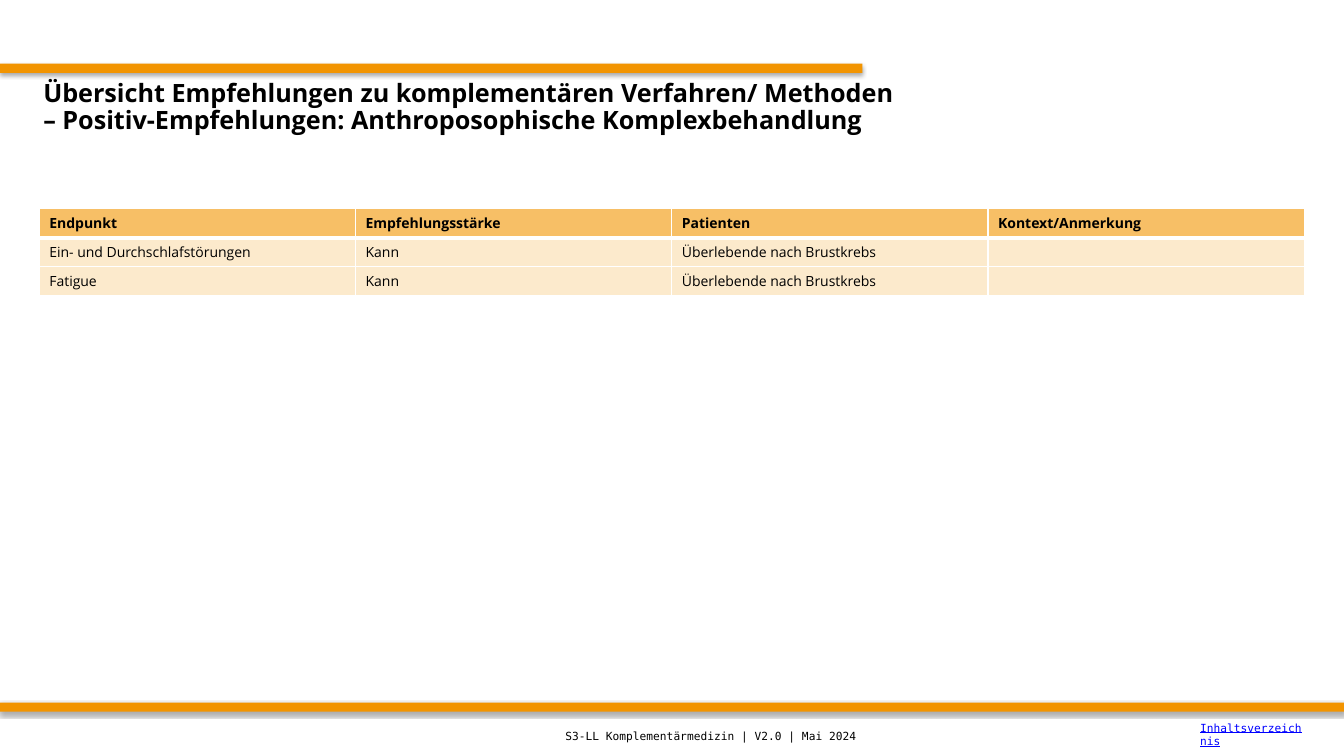
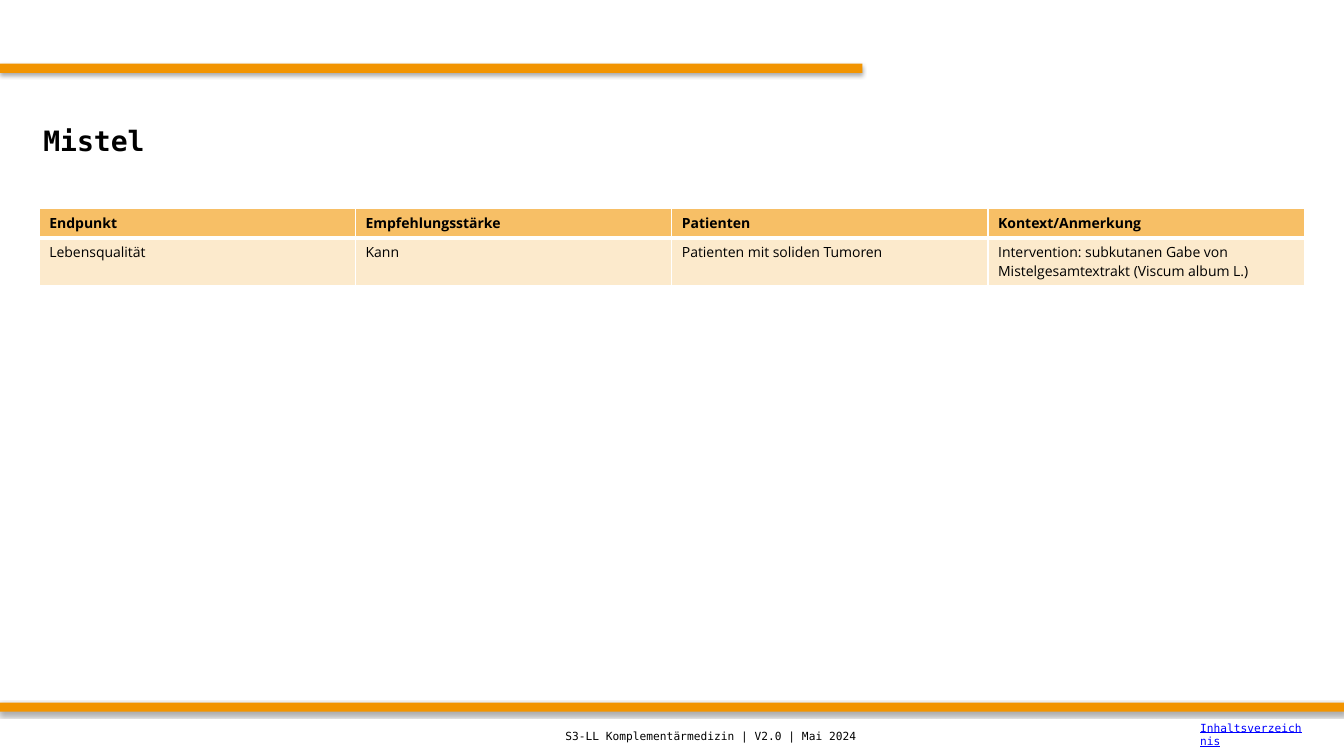
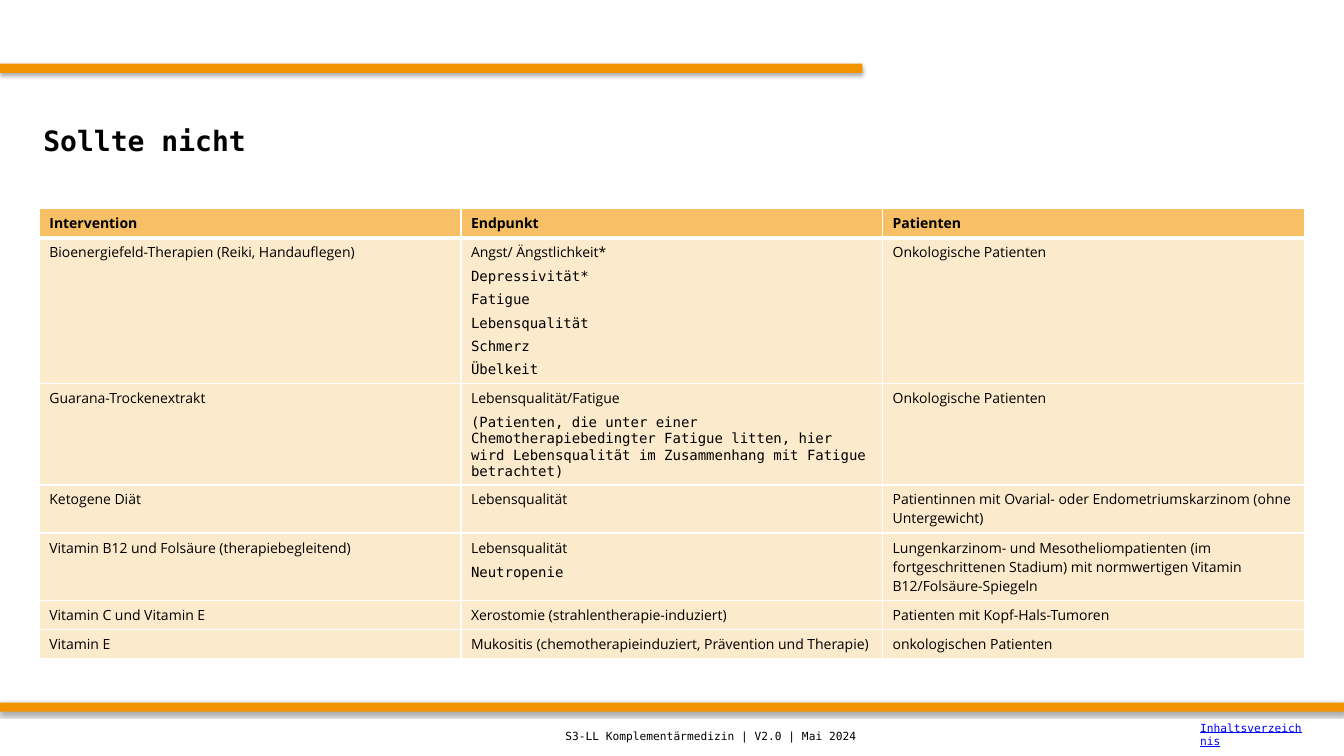
from lxml import etree
from pptx import Presentation
from pptx.dml.color import RGBColor
from pptx.enum.shapes import MSO_SHAPE
from pptx.enum.text import MSO_ANCHOR
from pptx.oxml.ns import qn
from pptx.util import Pt

RECTANGLE = MSO_SHAPE.RECTANGLE
TOP = MSO_ANCHOR.TOP
MIDDLE = MSO_ANCHOR.MIDDLE

BLANK_LAYOUT = 6
SLIDE_WIDTH, SLIDE_HEIGHT = 960, 540
SANS, MONO = "Open Sans", "DejaVu Sans Mono"
BLACK, WHITE, LINK_BLUE = "000000", "FFFFFF", "0000FF"
ORANGE, HEADER_FILL, BODY_FILL = "F29400", "F7BF66", "FCEACC"

TABLE_LEFT, TABLE_TOP, TABLE_WIDTH = 28.1, 149, 903.6
LINE_HEIGHT = 20.8
THIN, THICK = 1, 3

TREATMENT_HEADER = ["Endpunkt", "Empfehlungsstärke", "Patienten", "Kontext/Anmerkung"]
ANTHROPOSOPHIC_ROWS = [
    (LINE_HEIGHT, ["Ein- und Durchschlafstörungen", "Kann", "Überlebende nach Brustkrebs", ""]),
    (LINE_HEIGHT, ["Fatigue", "Kann", "Überlebende nach Brustkrebs", ""]),
]
MISTLETOE_ROWS = [
    (34.4, ["Lebensqualität", "Kann", "Patienten mit soliden Tumoren",
            "Intervention: subkutanen Gabe von Mistelgesamtextrakt (Viscum album L.)"]),
]
NEGATIVE_HEADER = ["Intervention", "Endpunkt", "Patienten"]
NEGATIVE_ROWS = [
    (104.2, ["Bioenergiefeld-Therapien (Reiki, Handauflegen)",
             "Angst/ Ängstlichkeit*\nDepressivität*\nFatigue\nLebensqualität\nSchmerz\nÜbelkeit",
             "Onkologische Patienten"]),
    (72.2, ["Guarana-Trockenextrakt",
            "Lebensqualität/Fatigue\n(Patienten, die unter einer Chemotherapiebedingter Fatigue "
            "litten, hier wird Lebensqualität im Zusammenhang mit Fatigue betrachtet)",
            "Onkologische Patienten"]),
    (34.4, ["Ketogene Diät", "Lebensqualität",
            "Patientinnen mit Ovarial- oder Endometriumskarzinom (ohne Untergewicht)"]),
    (48, ["Vitamin B12 und Folsäure (therapiebegleitend)", "Lebensqualität\nNeutropenie",
          "Lungenkarzinom- und Mesotheliompatienten (im fortgeschrittenen Stadium) "
          "mit normwertigen Vitamin B12/Folsäure-Spiegeln"]),
    (LINE_HEIGHT, ["Vitamin C und Vitamin E", "Xerostomie (strahlentherapie-induziert)",
                   "Patienten mit Kopf-Hals-Tumoren"]),
    (LINE_HEIGHT, ["Vitamin E", "Mukositis (chemotherapieinduziert, Prävention und Therapie)",
                   "onkologischen Patienten"]),
]


def color(hex_string):
    return RGBColor.from_string(hex_string)


def format_runs(paragraph, font_name, size, hex_color=BLACK, bold=False, underline=False):
    for run in paragraph.runs:
        run.font.name = font_name
        run.font.size = Pt(size)
        run.font.bold = bold
        run.font.underline = underline
        run.font.color.rgb = color(hex_color)


def add_text(slide, box, text, font_name, size, anchor=MIDDLE, line_spacing=1.0, **style):
    shape = slide.shapes.add_textbox(*map(Pt, box))
    text_frame = shape.text_frame
    text_frame.word_wrap = True
    text_frame.vertical_anchor = anchor
    text_frame.text = text
    for paragraph in text_frame.paragraphs:
        paragraph.line_spacing = line_spacing
        format_runs(paragraph, font_name, size, **style)


def add_band(slide, top, width):
    """Orange bar from the left edge with a soft shadow below."""
    band = slide.shapes.add_shape(RECTANGLE, 0, Pt(top), Pt(width), Pt(6.6))
    band.fill.solid()
    band.fill.fore_color.rgb = color(ORANGE)
    band.line.fill.background()
    band.shadow.inherit = False
    effects = band._element.spPr.find(qn("a:effectLst"))
    shadow = etree.SubElement(effects, qn("a:outerShdw"), blurRad=str(Pt(3.1)),
                              dist=str(Pt(1.8)), dir="5400000", rotWithShape="0")
    shadow_color = etree.SubElement(shadow, qn("a:srgbClr"), val=BLACK)
    etree.SubElement(shadow_color, qn("a:alpha"), val="35000")


def set_borders(cell, top, bottom):
    properties = cell._tc.get_or_add_tcPr()
    for side, width in (("L", THIN), ("R", THIN), ("T", top), ("B", bottom)):
        line = etree.SubElement(properties, qn(f"a:ln{side}"), w=str(Pt(width)))
        fill = etree.SubElement(line, qn("a:solidFill"))
        etree.SubElement(fill, qn("a:srgbClr"), val=WHITE)


def fill_cell(cell, text, row_index):
    """The first paragraph is set in sans, those after it in mono."""
    is_header = row_index == 0
    set_borders(cell, THICK if row_index == 1 else THIN, THICK if is_header else THIN)
    cell.fill.solid()
    cell.fill.fore_color.rgb = color(HEADER_FILL if is_header else BODY_FILL)
    cell.text_frame.text = text
    for index, paragraph in enumerate(cell.text_frame.paragraphs):
        paragraph.space_after = Pt(5)
        format_runs(paragraph, MONO if index else SANS, 10, bold=is_header)
        if not paragraph.runs:
            etree.SubElement(paragraph._p, qn("a:endParaRPr"), sz="1000")


def add_recommendation_table(slide, header, body_rows):
    rows = [(LINE_HEIGHT, header)] + body_rows
    total_height = sum(height for height, _ in rows)
    table = slide.shapes.add_table(len(rows), len(header), Pt(TABLE_LEFT), Pt(TABLE_TOP),
                                   Pt(TABLE_WIDTH), Pt(total_height)).table
    table.first_row = False
    table.horz_banding = False
    for column in table.columns:
        column.width = Pt(TABLE_WIDTH / len(header))
    for row_index, (height, texts) in enumerate(rows):
        table.rows[row_index].height = Pt(height)
        for column_index, text in enumerate(texts):
            fill_cell(table.cell(row_index, column_index), text, row_index)


def add_title(slide, text):
    add_text(slide, (23.8, 59.8, 912, 84.2), text, MONO, 20, line_spacing=0.9, bold=True)


def add_long_title(slide, text):
    add_text(slide, (23.8, 54, 650, 51), text, SANS, 18, anchor=TOP, line_spacing=0.9, bold=True)


def add_base_slide(presentation):
    """Blank slide with the bands and footer that all slides share."""
    slide = presentation.slides.add_slide(presentation.slide_layouts[BLANK_LAYOUT])
    add_band(slide, 45.4, 616)
    add_band(slide, 501.8, SLIDE_WIDTH)
    add_text(slide, (396.7, 512, 396.7, 28), "S3-LL Komplementärmedizin | V2.0 | Mai 2024", MONO, 8)
    add_text(slide, (850.2, 510.5, 88, 28), "Inhaltsverzeichnis", MONO, 8,
             hex_color=LINK_BLUE, underline=True)
    return slide


def main():
    presentation = Presentation()
    presentation.slide_width = Pt(SLIDE_WIDTH)
    presentation.slide_height = Pt(SLIDE_HEIGHT)

    slide = add_base_slide(presentation)
    add_long_title(slide, "Übersicht Empfehlungen zu komplementären Verfahren/ Methoden\v"
                          "– Positiv-Empfehlungen: Anthroposophische Komplexbehandlung")
    add_recommendation_table(slide, TREATMENT_HEADER, ANTHROPOSOPHIC_ROWS)

    slide = add_base_slide(presentation)
    add_title(slide, "Mistel")
    add_recommendation_table(slide, TREATMENT_HEADER, MISTLETOE_ROWS)

    slide = add_base_slide(presentation)
    add_title(slide, "Sollte nicht")
    add_recommendation_table(slide, NEGATIVE_HEADER, NEGATIVE_ROWS)

    presentation.save("out.pptx")


if __name__ == "__main__":
    main()
